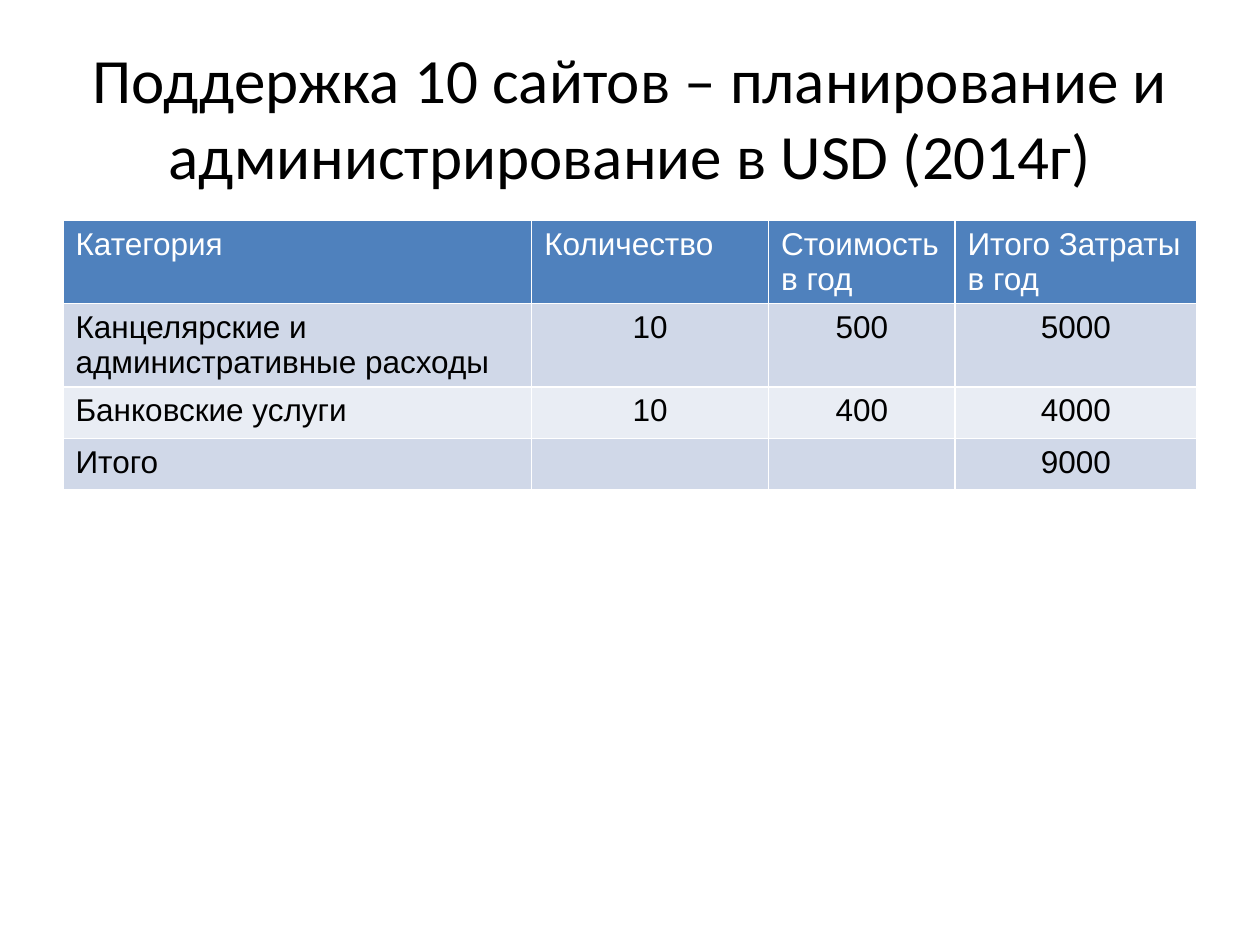
from pptx import Presentation
from pptx.dml.color import RGBColor
from pptx.enum.text import MSO_ANCHOR as Anchor, PP_ALIGN as Align
from pptx.util import Inches, Pt


def color(hex_string):
    return RGBColor.from_string(hex_string)


def add_text(paragraph, text, font_name, size, hex_string, alignment):
    paragraph.alignment = alignment
    run = paragraph.add_run()
    run.text = text
    run.font.name = font_name
    run.font.size = Pt(size)
    run.font.bold = False
    run.font.color.rgb = color(hex_string)


presentation = Presentation()
presentation.slide_width = Inches(10)
presentation.slide_height = Inches(7.5)
width, height = presentation.slide_width, presentation.slide_height
slide = presentation.slides.add_slide(presentation.slide_layouts[5])
margin = int(width * 0.05)
content_width = width - 2 * margin

title = slide.shapes.title
title.left, title.top = margin, int(height * 0.04)
title.width, title.height = content_width, Inches(1.25)
title.text_frame.word_wrap = True
title.text_frame.vertical_anchor = Anchor.MIDDLE
add_text(title.text_frame.paragraphs[0],
         "Поддержка 10 сайтов – планирование и администрирование в USD (2014г)",
         "Calibri", 36, "000000", Align.CENTER)

cost_rows = [
    ["Категория", "Количество", "Стоимость в год", "Итого Затраты в год"],
    ["Канцелярские и административные расходы", "10", "500", "5000"],
    ["Банковские услуги", "10", "400", "4000"],
    ["Итого", "", "", "9000"],
]
column_widths = [3.72, 1.88, 1.48, 1.92]
row_heights = [0.66, 0.66, 0.41, 0.41]
row_fills = ["4F81BD", "D0D8E8", "E9EDF4", "D0D8E8"]

table = slide.shapes.add_table(
    len(cost_rows), len(column_widths), margin, Inches(1.75),
    content_width, Inches(sum(row_heights))).table
for column, column_width in zip(table.columns, column_widths):
    column.width = Inches(column_width)
for row, row_height in zip(table.rows, row_heights):
    row.height = Inches(row_height)

for row_index, values in enumerate(cost_rows):
    for column_index, value in enumerate(values):
        cell = table.cell(row_index, column_index)
        cell.fill.solid()
        cell.fill.fore_color.rgb = color(row_fills[row_index])
        if value:
            is_number = row_index > 0 and column_index > 0
            add_text(cell.text_frame.paragraphs[0], value, "Arial", 18,
                     "000000" if row_index else "FFFFFF",
                     Align.CENTER if is_number else Align.LEFT)

presentation.save("out.pptx")
